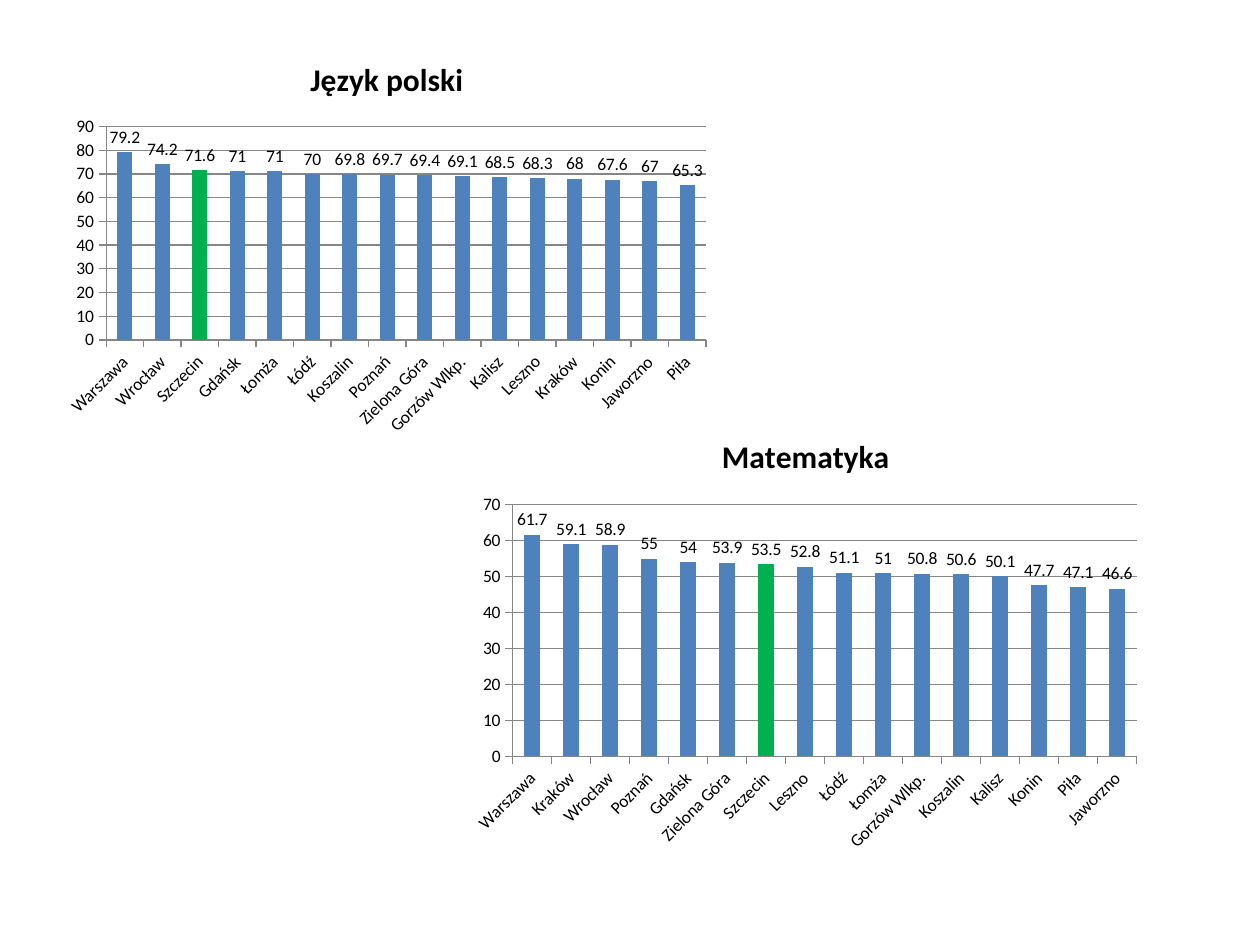
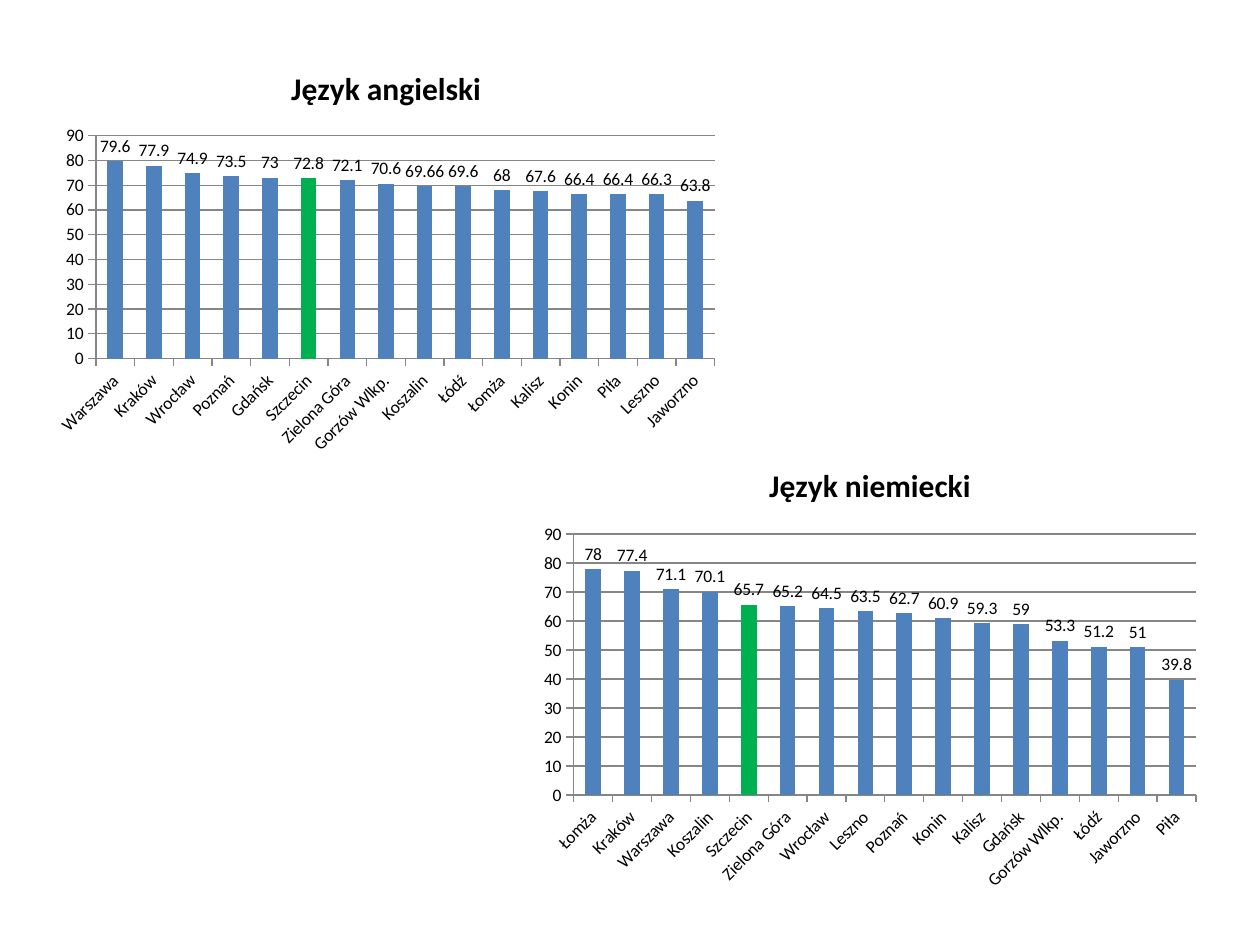
from dataclasses import dataclass

from pptx import Presentation
from pptx import util as u
from pptx.chart import data as chart_data
from pptx.chart.chart import Chart
from pptx.dml import color
from pptx.enum import chart as ec
from pptx.slide import Slide


@dataclass(frozen=True)
class Theme:
    font: str = "Calibri"
    text: color.RGBColor = color.RGBColor(0, 0, 0)
    bar: color.RGBColor = color.RGBColor(0x4F, 0x81, 0xBD)
    highlight: color.RGBColor = color.RGBColor(0x00, 0xB0, 0x50)
    rule: color.RGBColor = color.RGBColor(0x86, 0x86, 0x86)
    body_size: u.Pt = u.Pt(10)
    title_size: u.Pt = u.Pt(18)
    rule_width: u.Pt = u.Pt(0.75)


@dataclass(frozen=True)
class Ranking:
    subject: str
    left: float
    top: float
    width: float
    height: float
    axis_max: int
    scores: dict[str, float]


THEME = Theme()
HIGHLIGHTED_CITY = "Szczecin"
LABEL_ROTATION = -45 * 60000

POLISH = Ranking("Język polski", 0.43, 0.29, 5.28, 3.23, 90, {
    "Warszawa": 79.2, "Wrocław": 74.2, "Szczecin": 71.6, "Gdańsk": 71,
    "Łomża": 71, "Łódź": 70, "Koszalin": 69.8, "Poznań": 69.7,
    "Zielona Góra": 69.4, "Gorzów Wlkp.": 69.1, "Kalisz": 68.5, "Leszno": 68.3,
    "Kraków": 68, "Konin": 67.6, "Jaworzno": 67, "Piła": 65.3,
})
MATHS = Ranking("Matematyka", 3.66, 3.28, 5.47, 3.55, 70, {
    "Warszawa": 61.7, "Kraków": 59.1, "Wrocław": 58.9, "Poznań": 55,
    "Gdańsk": 54, "Zielona Góra": 53.9, "Szczecin": 53.5, "Leszno": 52.8,
    "Łódź": 51.1, "Łomża": 51, "Gorzów Wlkp.": 50.8, "Koszalin": 50.6,
    "Kalisz": 50.1, "Konin": 47.7, "Piła": 47.1, "Jaworzno": 46.6,
})
ENGLISH = Ranking("Język angielski", 0.35, 0.36, 5.43, 3.31, 90, {
    "Warszawa": 79.6, "Kraków": 77.9, "Wrocław": 74.9, "Poznań": 73.5,
    "Gdańsk": 73, "Szczecin": 72.8, "Zielona Góra": 72.1, "Gorzów Wlkp.": 70.6,
    "Koszalin": 69.66, "Łódź": 69.6, "Łomża": 68, "Kalisz": 67.6,
    "Konin": 66.4, "Piła": 66.4, "Leszno": 66.3, "Jaworzno": 63.8,
})
GERMAN = Ranking("Język niemiecki", 4.21, 3.51, 5.39, 3.63, 90, {
    "Łomża": 78, "Kraków": 77.4, "Warszawa": 71.1, "Koszalin": 70.1,
    "Szczecin": 65.7, "Zielona Góra": 65.2, "Wrocław": 64.5, "Leszno": 63.5,
    "Poznań": 62.7, "Konin": 60.9, "Kalisz": 59.3, "Gdańsk": 59,
    "Gorzów Wlkp.": 53.3, "Łódź": 51.2, "Jaworzno": 51, "Piła": 39.8,
})
SLIDES = ((POLISH, MATHS), (ENGLISH, GERMAN))


def style_title(chart: Chart, subject: str) -> None:
    chart.has_title = True
    heading = chart.chart_title.text_frame.paragraphs[0]
    heading.text = subject
    heading.font.name = THEME.font
    heading.font.size = THEME.title_size
    heading.font.bold = True
    heading.font.color.rgb = THEME.text


def style_axes(chart: Chart, axis_max: int) -> None:
    cities, points = chart.category_axis, chart.value_axis
    points.minimum_scale = 0
    points.maximum_scale = axis_max
    points.major_unit = 10
    points.has_major_gridlines = True
    for rule in (cities.format.line, points.format.line,
                 points.major_gridlines.format.line):
        rule.color.rgb = THEME.rule
        rule.width = THEME.rule_width
    for axis in (cities, points):
        axis.major_tick_mark = ec.XL_TICK_MARK.OUTSIDE
        axis.minor_tick_mark = ec.XL_TICK_MARK.NONE
        axis.tick_labels.font.size = THEME.body_size
    cities._element.txPr.bodyPr.set("rot", str(LABEL_ROTATION))


def style_bars(chart: Chart, cities: list[str]) -> None:
    plot = chart.plots[0]
    plot.gap_width = 150
    plot.vary_by_categories = False
    bars = plot.series[0]
    bars.invert_if_negative = False
    highlighted = bars.points[cities.index(HIGHLIGHTED_CITY)]
    for target, fill_color in ((bars, THEME.bar), (highlighted, THEME.highlight)):
        target.format.fill.solid()
        target.format.fill.fore_color.rgb = fill_color
    labels = bars.data_labels
    labels.show_value = True
    labels.position = ec.XL_LABEL_POSITION.OUTSIDE_END
    labels.font.size = THEME.body_size


def draw_ranking(slide: Slide, ranking: Ranking) -> None:
    cities = list(ranking.scores)
    results = chart_data.CategoryChartData()
    results.categories = cities
    results.add_series("Series 1", ranking.scores.values())
    chart = slide.shapes.add_chart(
        ec.XL_CHART_TYPE.COLUMN_CLUSTERED,
        u.Inches(ranking.left), u.Inches(ranking.top),
        u.Inches(ranking.width), u.Inches(ranking.height), results,
    ).chart
    chart.has_legend = False
    chart.font.name = THEME.font
    chart.font.size = THEME.body_size
    chart.font.color.rgb = THEME.text
    style_title(chart, ranking.subject)
    style_axes(chart, ranking.axis_max)
    style_bars(chart, cities)


def main() -> None:
    deck = Presentation()
    deck.slide_width, deck.slide_height = u.Inches(10), u.Inches(7.5)
    for rankings in SLIDES:
        slide = deck.slides.add_slide(deck.slide_layouts[6])
        for ranking in rankings:
            draw_ranking(slide, ranking)
    deck.save("out.pptx")


if __name__ == "__main__":
    main()
